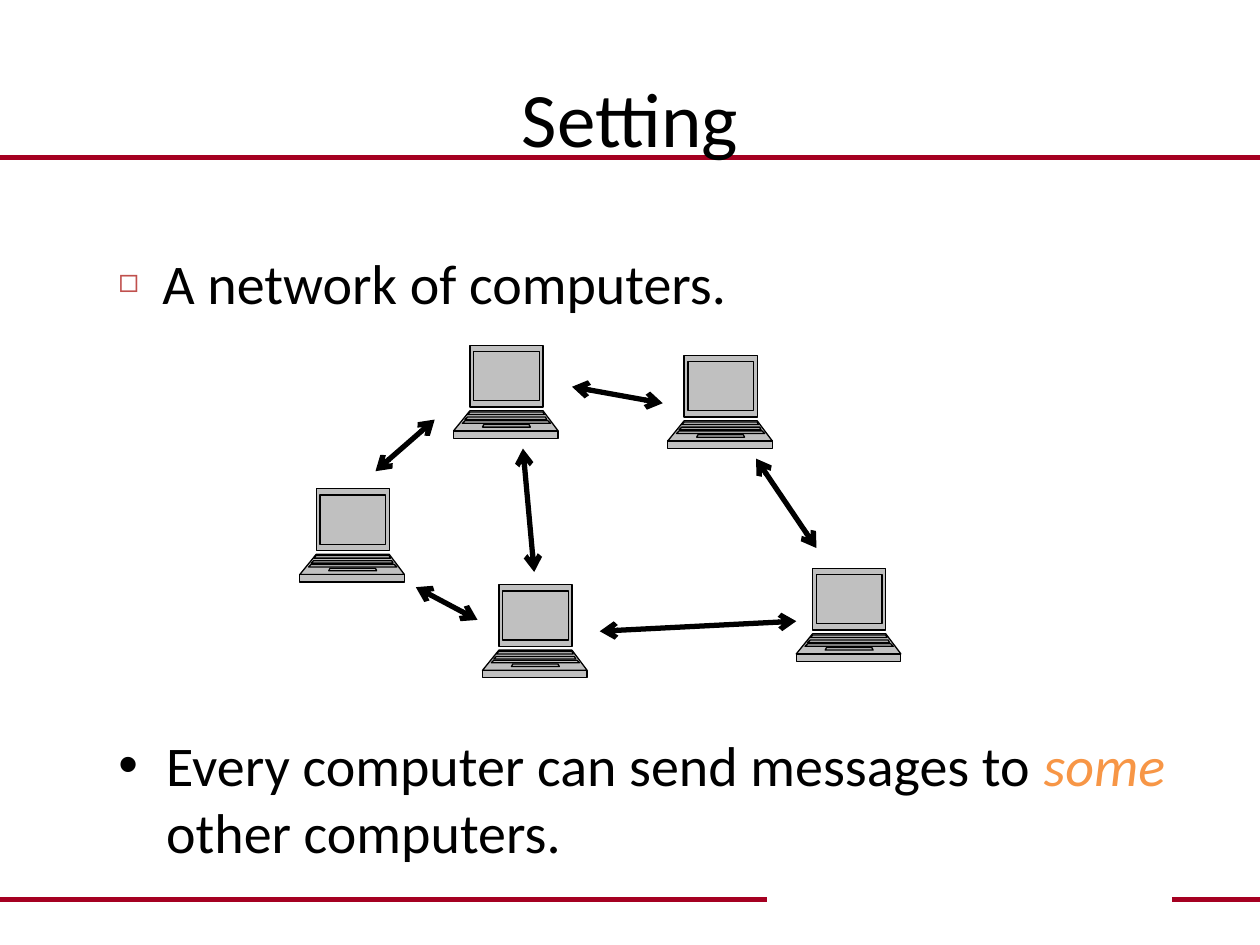
from lxml.etree import SubElement
from pptx import Presentation
from pptx.dml.color import RGBColor
from pptx.enum.shapes import MSO_CONNECTOR as Connector
from pptx.enum.text import MSO_ANCHOR as Anchor, PP_ALIGN as Align
from pptx.oxml.ns import qn
from pptx.util import Inches, Pt

BLACK = RGBColor(0x00, 0x00, 0x00)
CRIMSON = RGBColor(0xA5, 0x00, 0x21)
ORANGE = RGBColor(0xF7, 0x96, 0x46)
BRICK = RGBColor(0xC0, 0x50, 0x4D)
GREY = RGBColor(0xC0, 0xC0, 0xC0)

# Content: (text, colour, italic) spans
TITLE = [("Setting", BLACK, False)]
NETWORK = [("A network of computers.", BLACK, False)]
MESSAGES = [("Every computer can send messages to ", BLACK, False),
            ("some ", ORANGE, True),
            ("other computers.", BLACK, False)]

# Lines in inches: (x1, y1, x2, y2)
RULES = [(9.3, 7.14, 10, 7.14), (0, 7.14, 6.09, 7.14), (0, 1.25, 10, 1.25)]
LINKS = [(4.76, 5.01, 6.32, 4.93), (6.48, 4.35, 6, 3.64),
         (4.24, 4.54, 4.15, 3.56), (5.26, 3.2, 4.54, 3.07),
         (3.79, 4.92, 3.3, 4.66), (3.45, 3.33, 2.98, 3.74)]

# Top left corner of each computer
COMPUTERS = [(2.38, 3.88), (5.3, 2.82), (3.6, 2.74), (3.83, 4.64), (6.32, 4.51)]

# Laptop parts: (top, bottom, top left, top right, bottom left, bottom right)
LAPTOP = [
    (0, 0.49, 0.13, 0.71, 0.13, 0.71),        # lid
    (0.52, 0.68, 0.13, 0.71, 0, 0.83),        # keyboard
    (0.68, 0.74, 0, 0.83, 0, 0.83),           # front edge
    (0.05, 0.44, 0.16, 0.68, 0.16, 0.68),     # screen
    (0.53, 0.55, 0.13, 0.71, 0.11, 0.72),     # key row 1
    (0.63, 0.65, 0.24, 0.6, 0.23, 0.61),      # touchpad
    (0.57, 0.59, 0.11, 0.73, 0.09, 0.74),     # key row 2
    (0.6, 0.62, 0.09, 0.75, 0.07, 0.77),      # key row 3
]


def add_line(page, ends, color, arrows=False):
    line = page.shapes.add_connector(Connector.STRAIGHT, *map(Inches, ends))
    line.line.color.rgb = color
    line.line.width = Pt(3)
    if arrows:
        outline = line.line._get_or_add_ln()
        for end in ("a:headEnd", "a:tailEnd"):
            SubElement(outline, qn(end), type="arrow")
    SubElement(line._element.spPr, qn("a:effectLst"))


def split_outline(shape):
    """Give every contour its own path, so overlapping parts all stay filled."""
    path = shape._element.find(".//" + qn("a:path"))
    path_list = path.getparent()
    for step in list(path):
        if step.tag == qn("a:moveTo"):
            part = SubElement(path_list, qn("a:path"), dict(path.attrib))
        part.append(step)
    path_list.remove(path)


def add_computer(page, left, top):
    builder = None
    for upper, lower, left1, right1, left2, right2 in LAPTOP:
        corners = [(Inches(left + x), Inches(top + y)) for x, y in (
            (left1, upper), (right1, upper), (right2, lower), (left2, lower))]
        if builder is None:
            builder = page.shapes.build_freeform(*corners[0])
        else:
            builder.move_to(*corners[0])
        builder.add_line_segments(corners[1:], close=True)
    computer = builder.convert_to_shape()
    split_outline(computer)
    computer.shadow.inherit = False
    computer.fill.solid()
    computer.fill.fore_color.rgb = GREY
    computer.line.color.rgb = BLACK
    computer.line.width = Pt(0.75)


def add_bullet(para, char, indent, color=None, size=None):
    props = para._p.get_or_add_pPr()
    props.set("marL", str(Inches(indent)))
    props.set("indent", str(-Inches(indent)))
    if color is not None:
        SubElement(SubElement(props, qn("a:buClr")), qn("a:srgbClr"), val=str(color))
    if size is not None:
        SubElement(props, qn("a:buSzPct"), val=str(size * 1000))
    SubElement(props, qn("a:buFont"), typeface="Arial")
    SubElement(props, qn("a:buChar"), char=char)


def add_text(page, place, spans, size, bullet=None):
    box = page.shapes.add_textbox(*map(Inches, place))
    frame = box.text_frame
    frame.word_wrap = True
    para = frame.paragraphs[0]
    if bullet:
        add_bullet(para, **bullet)
    else:
        frame.vertical_anchor = Anchor.MIDDLE
        para.alignment = Align.CENTER
    para.font.name = "Calibri"
    para.font.size = Pt(size)
    for text, color, italic in spans:
        span = para.add_run()
        span.text = text
        span.font.color.rgb = color
        span.font.italic = italic


deck = Presentation()
deck.slide_width, deck.slide_height = Inches(10), Inches(7.5)
page = deck.slides.add_slide(deck.slide_layouts[6])

# Rules, title and lower text
for rule in RULES:
    add_line(page, rule, CRIMSON)
add_text(page, (0.5, 0.3, 9, 1.25), TITLE, 44)
add_text(page, (0.84, 5.75, 8.92, 1.43), MESSAGES, 32,
         dict(char="•", indent=0.38))

# Network
for corner in COMPUTERS:
    add_computer(page, *corner)
for link in LINKS:
    add_line(page, link, BLACK, arrows=True)

# Upper text
add_text(page, (0.84, 1.92, 8.92, 0.87), NETWORK, 32,
         dict(char="◻", indent=0.35, color=BRICK, size=60))

deck.save("out.pptx")
